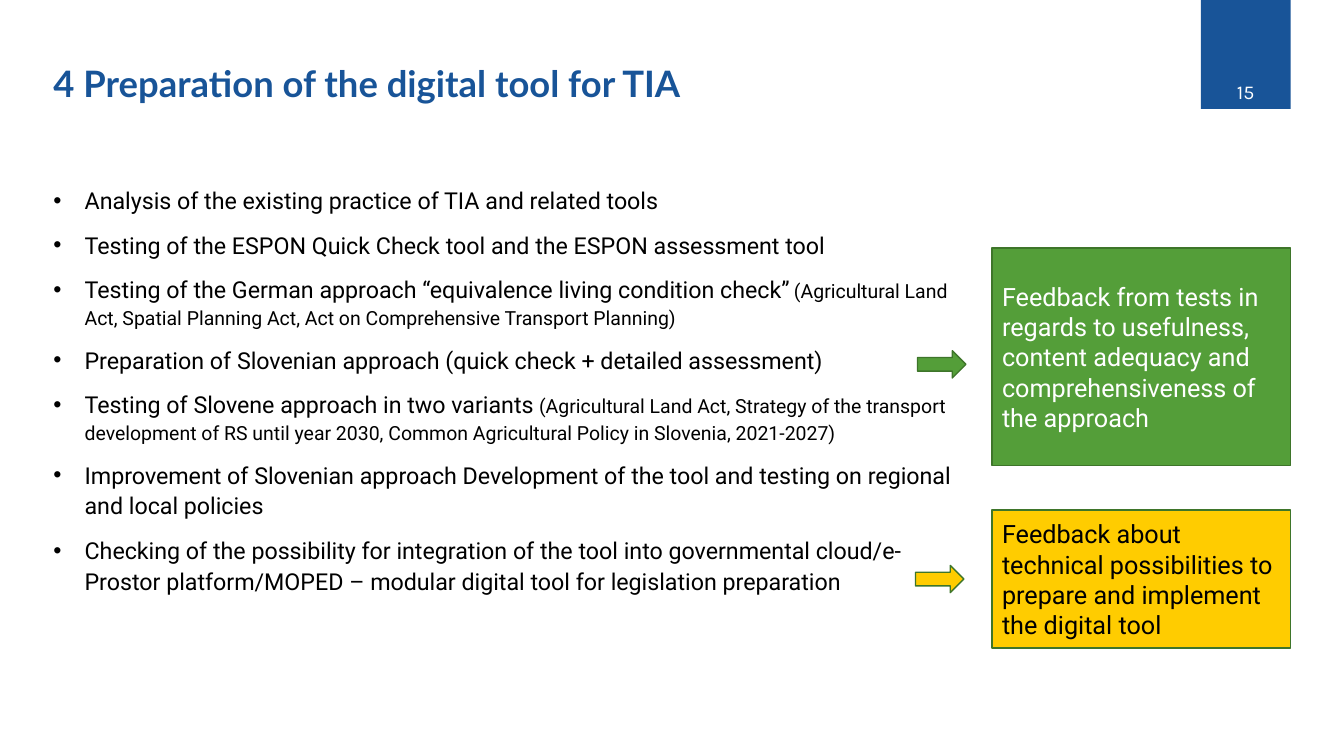
from lxml import etree
from pptx import Presentation, util as u
from pptx.dml.color import RGBColor
from pptx.enum import shapes, text
from pptx.oxml.ns import qn

BLUE, GREEN, YELLOW, EDGE = "185498", "549E39", "FFCC00", "3E752A"
BLACK, WHITE = "000000", "FFFFFF"
LEFT = 0.53
MAIN, DETAIL = 16.6, 13.9


def add_span(para, words, size, colour, font="Roboto", bold=False):
    span = para.add_run()
    span.text = words
    span.font.name = font
    span.font.size = u.Pt(size)
    span.font.bold = bold
    span.font.color.rgb = RGBColor.from_string(colour)


def add_block(kind, place, fill, line=None):
    """Add a flat preset shape at (left, top, width, height) in inches."""
    block = page.shapes.add_shape(kind, *map(u.Inches, place))
    block.shadow.inherit = False
    block.fill.solid()
    block.fill.fore_color.rgb = RGBColor.from_string(fill)
    if line:
        block.line.color.rgb = RGBColor.from_string(line)
        block.line.width = u.Pt(1)
    else:
        block.line.fill.background()
    return block


deck = Presentation()
deck.slide_width, deck.slide_height = u.Inches(13.33), u.Inches(7.5)
page = deck.slides.add_slide(deck.slide_layouts[6])

# Title and body boxes
frames = []
for top, width, height, anchor in [
    (0.4, 10.99, 0.69, text.MSO_ANCHOR.BOTTOM),
    (1.77, 9.14, 4.39, text.MSO_ANCHOR.TOP),
]:
    box = page.shapes.add_textbox(*map(u.Inches, (LEFT, top, width, height)))
    frame = box.text_frame
    frame.word_wrap = True
    frame.margin_left = 0
    frame.vertical_anchor = anchor
    frames.append(frame)
title, body = frames

title.paragraphs[0].line_spacing = 0.9
add_span(title.paragraphs[0], "4 Preparation of the digital tool for TIA", 26, BLUE, "Lato", True)

# Bulleted steps: main wording, then an optional smaller detail
steps = [
    ("Analysis of the existing practice of TIA and related tools", ""),
    ("Testing of the ESPON Quick Check tool and the ESPON assessment tool", ""),
    ("Testing of the German approach “equivalence living condition check”",
     " (Agricultural Land Act, Spatial Planning Act, Act on Comprehensive Transport Planning)"),
    ("Preparation of Slovenian approach (quick check + detailed assessment)", ""),
    ("Testing of Slovene approach in two variants ",
     "(Agricultural Land Act, Strategy of the transport development of RS until year 2030, "
     "Common Agricultural Policy in Slovenia, 2021-2027)"),
    ("Improvement of Slovenian approach Development of the tool and testing on regional "
     "and local policies", ""),
    ("Checking of the possibility for integration of the tool into governmental "
     "cloud/e-Prostor platform/MOPED – modular digital tool for legislation preparation", ""),
]
indent = u.Inches(0.31)
for number, (step, detail) in enumerate(steps):
    para = body.add_paragraph() if number else body.paragraphs[0]
    para.line_spacing = 1.1
    para.space_before = u.Pt(10 if number else 0)
    props = para._p.get_or_add_pPr()
    props.set("marL", str(indent))
    props.set("indent", str(-indent))
    etree.SubElement(props, qn("a:buFont"), typeface="Arial")
    etree.SubElement(props, qn("a:buChar"), char="•")
    add_span(para, step, MAIN, BLACK)
    if detail:
        add_span(para, detail, DETAIL, BLACK)

# Page number tab
tab = add_block(shapes.MSO_SHAPE.RECTANGLE, (11.91, -0.01, 0.89, 1.09), BLUE)
tab.text_frame.vertical_anchor = text.MSO_ANCHOR.BOTTOM
para = tab.text_frame.paragraphs[0]
para.alignment = text.PP_ALIGN.CENTER
para.line_spacing = 0.9
add_span(para, "15", 14, WHITE, "Karla")

# Feedback cards, each with its arrow
for top, height, arrow_left, arrow_top, fill, colour, feedback in [
    (2.46, 2.16, 9.1, 3.48, GREEN, WHITE,
     "Feedback from tests in regards to usefulness, content adequacy and "
     "comprehensiveness of the approach"),
    (5.06, 1.37, 9.08, 5.61, YELLOW, BLACK,
     "Feedback about technical possibilities to prepare and implement the digital tool"),
]:
    card = add_block(shapes.MSO_SHAPE.RECTANGLE, (9.84, top, 2.96, height), fill, EDGE)
    card.text_frame.word_wrap = True
    card.text_frame.vertical_anchor = text.MSO_ANCHOR.MIDDLE
    para = card.text_frame.paragraphs[0]
    para.alignment = text.PP_ALIGN.LEFT
    add_span(para, feedback, 18, colour)
    add_block(shapes.MSO_SHAPE.RIGHT_ARROW, (arrow_left, arrow_top, 0.48, 0.27), fill, EDGE)

deck.save("out.pptx")
